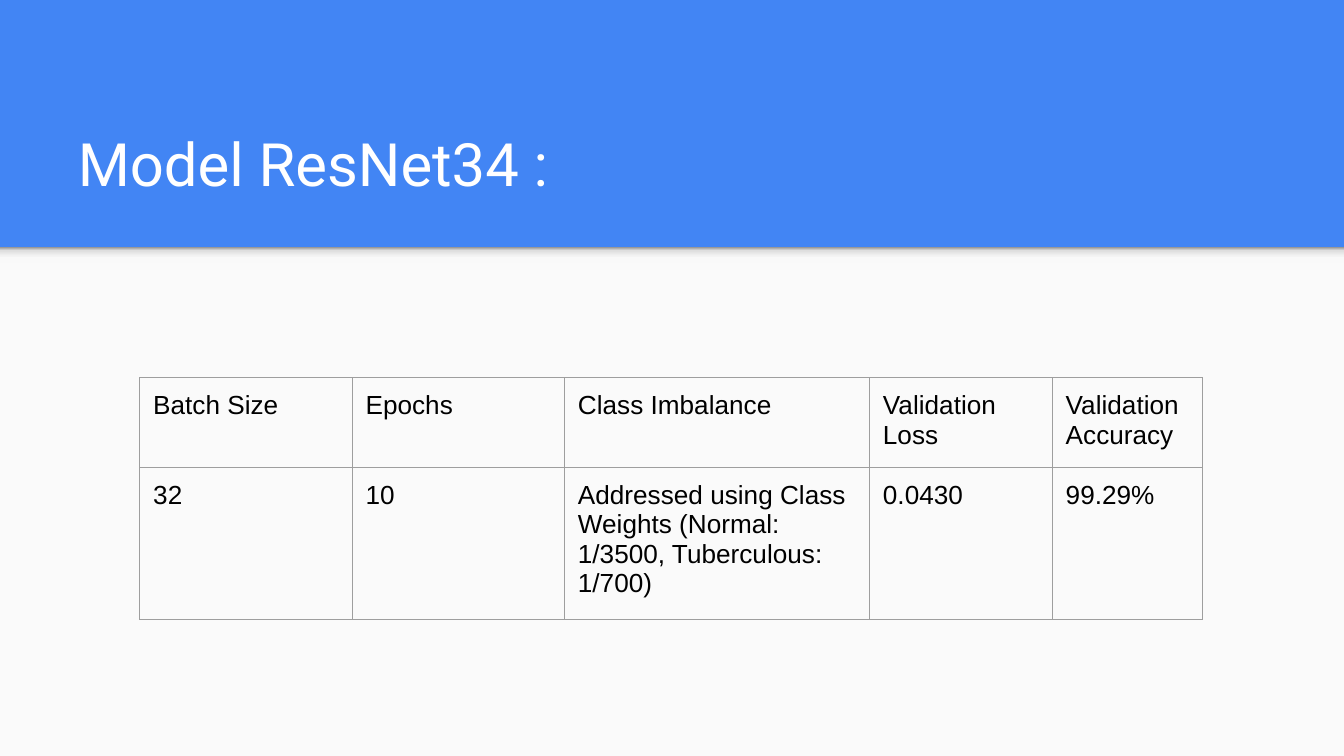
"""Build a slide with a title band and a table of ResNet34 training results."""
from dataclasses import dataclass

from lxml import etree
from pptx import Presentation
from pptx.dml.color import RGBColor
from pptx.enum.shapes import MSO_SHAPE
from pptx.enum.text import MSO_ANCHOR
from pptx.oxml.ns import qn
from pptx.util import Inches, Pt

RECT = MSO_SHAPE.RECTANGLE
TOP = MSO_ANCHOR.TOP
BOTTOM = MSO_ANCHOR.BOTTOM


@dataclass(frozen=True)
class Theme:
    """Colours, fonts and sizes of the slide."""
    band: str = "4285F4"
    body: str = "FAFAFA"
    title: str = "FFFFFF"
    text: str = "000000"
    border: str = "9E9E9E"
    shade: tuple = ((0, "F9F9F9"), (36, "F9F9F9"), (80, "DEDEDE"), (100, "999999"))
    title_font: str = "Roboto"
    table_font: str = "Arial"
    title_size: float = 32
    table_size: float = 14
    border_width: float = 0.75
    inset: float = 0.1


THEME = Theme()
WIDTH = 10
HEIGHT = WIDTH * 9 / 16
BAND_HEIGHT = 1.84
COL_WIDTHS = (1.58, 1.58, 2.27, 1.36, 1.12)
ROW_HEIGHT = 0.42
RESULTS = (
    ("Batch Size", "Epochs", "Class Imbalance", "Validation Loss", "Validation Accuracy"),
    ("32", "10", "Addressed using Class Weights (Normal: 1/3500, Tuberculous: 1/700)",
     "0.0430", "99.29%"),
)


def write_text(tf, text, *, font, size, color):
    """Put one formatted run into a text frame."""
    tf.word_wrap = True
    r = tf.paragraphs[0].add_run()
    r.text = text
    r.font.name = font
    r.font.size = Pt(size)
    r.font.color.rgb = RGBColor.from_string(color)


def set_insets(box):
    """Give a text frame or a cell equal margins on all sides."""
    for side in ("left", "right", "top", "bottom"):
        setattr(box, f"margin_{side}", Inches(THEME.inset))


def add_color(parent, color):
    """Append an RGB colour element."""
    etree.SubElement(parent, qn("a:srgbClr"), val=color)


def add_panel(slide, top, height):
    """Add a full-width rectangle in the body colour."""
    sp = slide.shapes.add_shape(RECT, 0, Inches(top), Inches(WIDTH), Inches(height))
    sp.shadow.inherit = False
    sp.line.fill.background()
    sp.fill.solid()
    sp.fill.fore_color.rgb = RGBColor.from_string(THEME.body)
    return sp


def shade_upward(sp, stops):
    """Fill a shape with a gradient that runs from bottom to top."""
    sp.fill.gradient()
    sp.fill.gradient_angle = 90
    stop_list = sp.element.spPr.find(qn("a:gradFill")).find(qn("a:gsLst"))
    for stop in list(stop_list):
        stop_list.remove(stop)
    for position, color in stops:
        add_color(etree.SubElement(stop_list, qn("a:gs"), pos=str(position * 1000)), color)


def add_title(slide, text):
    """Add the slide title at the foot of the band."""
    sp = slide.shapes.add_textbox(Inches(0.37), Inches(0.74), Inches(8.99), Inches(0.84))
    tf = sp.text_frame
    tf.vertical_anchor = BOTTOM
    set_insets(tf)
    write_text(tf, text, font=THEME.title_font, size=THEME.title_size, color=THEME.title)


def set_borders(cell):
    """Draw a thin line on each side of a cell."""
    props = cell._tc.get_or_add_tcPr()
    for i, side in enumerate(("lnL", "lnR", "lnT", "lnB")):
        line = etree.Element(qn(f"a:{side}"), w=str(Pt(THEME.border_width)))
        add_color(etree.SubElement(line, qn("a:solidFill")), THEME.border)
        props.insert(i, line)


def add_results(slide, rows):
    """Add the bordered results table, whose rows grow to fit their text."""
    table = slide.shapes.add_table(
        len(rows), len(COL_WIDTHS), Inches(1.04), Inches(2.81),
        Inches(sum(COL_WIDTHS)), Inches(ROW_HEIGHT * len(rows))).table
    table.first_row = table.horz_banding = False
    for col, width in zip(table.columns, COL_WIDTHS):
        col.width = Inches(width)
    for row, values in zip(table.rows, rows):
        row.height = Inches(ROW_HEIGHT)
        for cell, value in zip(row.cells, values):
            cell.fill.background()
            cell.vertical_anchor = TOP
            set_insets(cell)
            set_borders(cell)
            write_text(cell.text_frame, value, font=THEME.table_font,
                       size=THEME.table_size, color=THEME.text)


def main():
    """Build and save the presentation."""
    prs = Presentation()
    prs.slide_width = Inches(WIDTH)
    prs.slide_height = Inches(HEIGHT)
    slide = prs.slides.add_slide(prs.slide_layouts[6])
    slide.background.fill.solid()
    slide.background.fill.fore_color.rgb = RGBColor.from_string(THEME.band)
    add_panel(slide, BAND_HEIGHT, HEIGHT - BAND_HEIGHT)
    shade_upward(add_panel(slide, BAND_HEIGHT, 0.12), THEME.shade)
    add_title(slide, " Model ResNet34 :")
    add_results(slide, RESULTS)
    prs.save("out.pptx")


if __name__ == "__main__":
    main()
